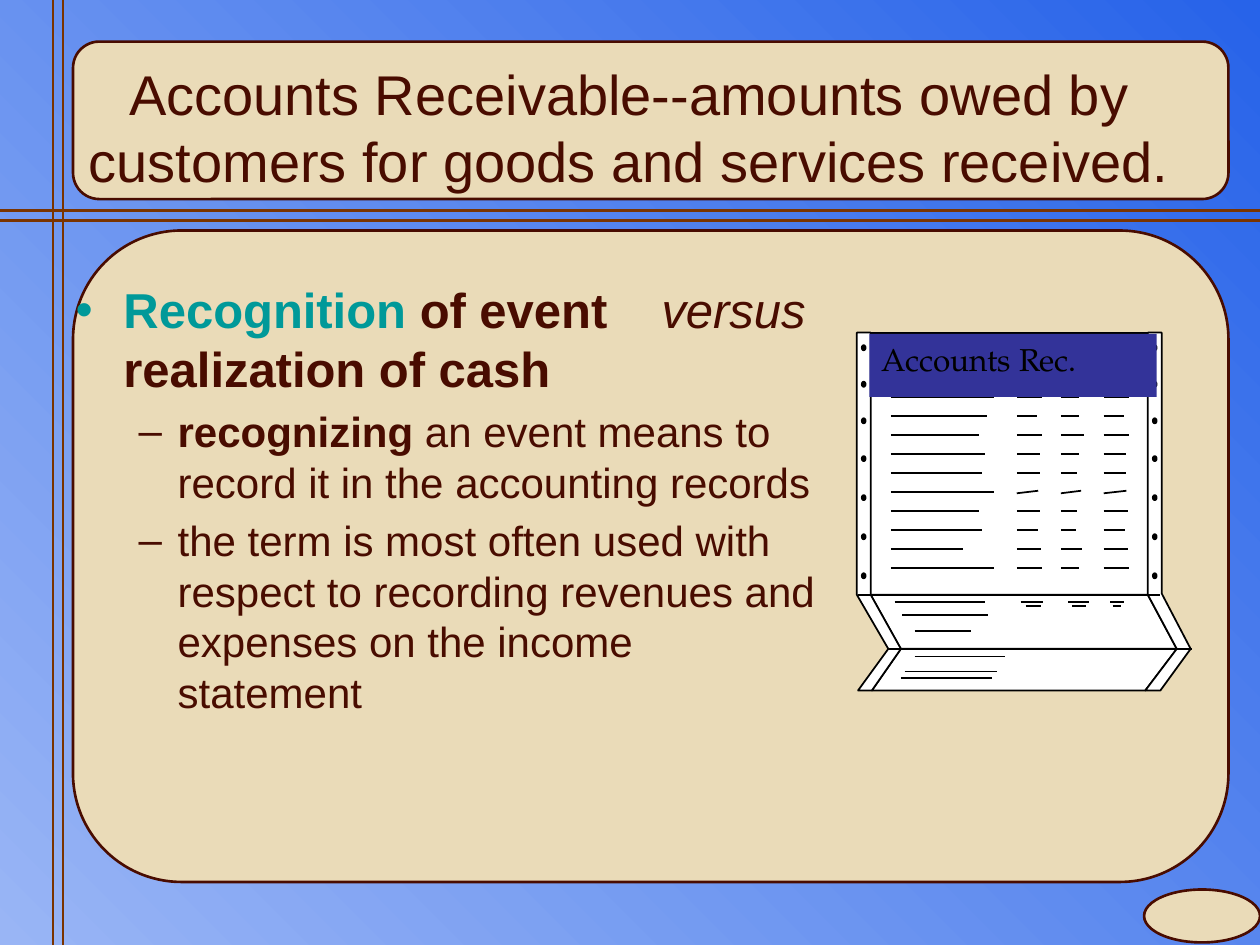
import pptx
import pptx.dml.color
import pptx.enum.dml
import pptx.enum.shapes
import pptx.enum.text
import pptx.oxml
import pptx.oxml.ns
import pptx.util

Inches = pptx.util.Inches
Pt = pptx.util.Pt
RGBColor = pptx.dml.color.RGBColor
KIND = pptx.enum.shapes.MSO_SHAPE
ALIGN = pptx.enum.text.PP_ALIGN
ANCHOR = pptx.enum.text.MSO_ANCHOR

PALE = RGBColor(0x99, 0xB5, 0xF5)
BLUE = RGBColor(0x27, 0x63, 0xE9)
SAND = RGBColor(0xEA, 0xDB, 0xB8)
MAROON = RGBColor(0x49, 0x0C, 0x00)
BROWN = RGBColor(0x7A, 0x34, 0x00)
TEAL = RGBColor(0x00, 0x99, 0x99)
NAVY = RGBColor(0x33, 0x33, 0x99)
WHITE = RGBColor(0xFF, 0xFF, 0xFF)
BLACK = RGBColor(0x00, 0x00, 0x00)

PAPER = [
    [(9.34, 5.15), (7.15, 5.15), (6.92, 5.48), (9.09, 5.48)],
    [(9.11, 4.72), (9.11, 2.64), (6.91, 2.64), (6.91, 4.72)],
    [(9.34, 5.15), (9.11, 4.72), (6.91, 4.72), (7.15, 5.15)],
    [(6.91, 2.64), (6.91, 4.72), (7.15, 5.15), (6.92, 5.48),
     (6.81, 5.48), (7.05, 5.15), (6.8, 4.72), (6.8, 2.64)],
    [(9.22, 2.64), (9.22, 4.71), (9.45, 5.15), (9.21, 5.48),
     (9.09, 5.48), (9.34, 5.15), (9.11, 4.72), (9.11, 2.64)],
]
HOLES = [2.74, 3.03, 3.32, 3.62, 3.93, 4.24, 4.55]

# Left edge of each ledger column, then the right end of its ten entries
LEDGER = [
    (7.07, [7.89, 7.83, 7.77, 7.82, 7.79, 7.89, 7.77, 7.79, 7.64, 7.89]),
    (8.07, [8.27, 8.23, 8.27, 8.25, 8.25, 8.24, 8.25, 8.24, 8.26, 8.27]),
    (8.42, [8.56, 8.56, 8.6, 8.56, 8.55, 8.58, 8.55, 8.54, 8.59, 8.56]),
    (8.76, [8.96, 8.92, 8.96, 8.94, 8.94, 8.94, 8.95, 8.93, 8.95, 8.96]),
]
LEDGER_TOP, LEDGER_STEP, SLOPED_ROW = 3.15, 0.151, 5

# Left, right and height of the level strokes on the folded part
FOLDS = [
    (7.1, 7.82, 4.78), (7.16, 7.84, 4.88), (7.26, 7.71, 5.01),
    (7.26, 7.98, 5.21), (7.18, 7.91, 5.33), (7.15, 7.87, 5.38),
    (8.1, 8.28, 4.78), (8.14, 8.26, 4.81), (8.48, 8.64, 4.78),
    (8.51, 8.62, 4.81), (8.81, 8.92, 4.78), (8.83, 8.9, 4.81),
    (6.81, 9.21, 4.72), (7.04, 9.46, 5.15),
]


def paint(shape, fill, line=None, width=1):
    shape.shadow.inherit = False
    shape.fill.solid()
    shape.fill.fore_color.rgb = fill
    if line is None:
        shape.line.fill.background()
    else:
        shape.line.color.rgb = line
        shape.line.width = Pt(width)


def add_box(shapes, kind, box, fill, line=None, width=1):
    shape = shapes.add_shape(kind, *map(Inches, box))
    paint(shape, fill, line, width)
    return shape


def add_line(shapes, start, end, color=BLACK, width=1):
    line = shapes.add_connector(
        pptx.enum.shapes.MSO_CONNECTOR.STRAIGHT, *map(Inches, start + end))
    line.line.color.rgb = color
    line.line.width = Pt(width)
    line.element.spPr.append(pptx.oxml.parse_xml(
        "<a:effectLst %s/>" % pptx.oxml.ns.nsdecls("a")))


def add_sheet(shapes, points):
    spots = [(Inches(x), Inches(y)) for x, y in points]
    pen = shapes.build_freeform(*spots[0], scale=1.0)
    pen.add_line_segments(spots[1:], close=True)
    paint(pen.convert_to_shape(), WHITE, BLACK)


def add_run(para, text, size, color=MAROON, bold=False, italic=False,
            face="Arial"):
    run = para.add_run()
    run.text = text
    font = run.font
    font.name, font.size = face, Pt(size)
    font.bold, font.italic = bold, italic
    font.color.rgb = color


def place(holder, box):
    """Move a placeholder to box, in front of all shapes so far."""
    holder.left, holder.top, holder.width, holder.height = map(Inches, box)
    holder.element.getparent().append(holder.element)
    frame = holder.text_frame
    frame.auto_size = pptx.enum.text.MSO_AUTO_SIZE.NONE
    frame.vertical_anchor = ANCHOR.TOP
    frame.word_wrap = True
    return frame


def indent(para, left, hang):
    props = para._p.get_or_add_pPr()
    props.set("marL", str(Inches(left)))
    props.set("indent", str(-Inches(hang)))
    return props


def add_frame(slide):
    """Draw the backdrop, panels and crossing double rules."""
    fill = slide.background.fill
    fill.gradient()
    fill.gradient_angle = 45
    for stop, color in zip(fill.gradient_stops, (PALE, BLUE)):
        stop.color.rgb = color
    shapes = slide.shapes
    add_box(shapes, KIND.OVAL, (9.08, 7.06, 0.92, 0.42), SAND, MAROON, 1.5)
    for top, height in ((0.33, 1.25), (1.83, 5.17)):
        add_box(shapes, KIND.ROUNDED_RECTANGLE, (0.58, top, 9.17, height),
                SAND, MAROON, 1.5)
    for x, y in ((0.5, 1.67), (0.42, 1.75)):
        add_line(shapes, (x, 0), (x, 7.5), BROWN, 1.5)
        add_line(shapes, (0, y), (10, y), BROWN, 1.5)


def add_words(slide):
    title = place(slide.shapes.title, (0.58, 0.42, 8.83, 1.05)).paragraphs[0]
    title.alignment = ALIGN.CENTER
    add_run(title, "Accounts Receivable--amounts owed by customers for "
            "goods and services received.", 32)

    frame = place(slide.placeholders[1], (0.5, 2.17, 6.08, 5.17))
    head = frame.paragraphs[0]
    props = indent(head, 0.38, 0.38)
    props.append(pptx.oxml.parse_xml(
        '<a:tabLst %s><a:tab pos="%d" algn="l"/></a:tabLst>'
        % (pptx.oxml.ns.nsdecls("a"), Inches(4.65))))
    add_run(head, "Recognition", 28, TEAL, bold=True)
    add_run(head, " of event\t", 28, bold=True)
    add_run(head, "versus ", 28, italic=True)
    add_run(head, "realization of cash", 28, bold=True)

    points = [
        [("recognizing ", True),
         ("an event means to record it in the accounting records", False)],
        [("the term is most often used with respect to recording revenues "
          "and expenses on the income statement", False)],
    ]
    for runs in points:
        para = frame.add_paragraph()
        para.level = 1
        indent(para, 0.81, 0.31)
        for text, bold in runs:
            add_run(para, text, 24, bold=bold)


def add_form(shapes):
    """Draw the folded printout with its holes, entries and label."""
    for points in PAPER:
        add_sheet(shapes, points)
    for x in (6.84, 9.15):
        for y in HOLES:
            add_box(shapes, KIND.OVAL, (x, y, 0.03, 0.04), BLACK, BLACK)
    for left, ends in LEDGER:
        for row, right in enumerate(ends):
            y = LEDGER_TOP + row * LEDGER_STEP
            rise = 0.02 if row == SLOPED_ROW and left > 8 else 0
            add_line(shapes, (left, y + rise / 2), (right, y - rise / 2))
    for left, right, y in FOLDS:
        add_line(shapes, (left, y), (right, y))
    label = add_box(shapes, KIND.RECTANGLE, (6.9, 2.65, 2.28, 0.5), NAVY)
    frame = label.text_frame
    frame.word_wrap = True
    frame.vertical_anchor = ANCHOR.TOP
    para = frame.paragraphs[0]
    para.alignment = ALIGN.LEFT
    add_run(para, "Accounts Rec.", 18, BLACK, face="TeX Gyre Pagella")


def main():
    deck = pptx.Presentation()
    deck.slide_width, deck.slide_height = Inches(10), Inches(7.5)
    slide = deck.slides.add_slide(deck.slide_layouts[1])
    add_frame(slide)
    add_words(slide)
    add_form(slide.shapes)
    deck.save("out.pptx")


if __name__ == "__main__":
    main()
